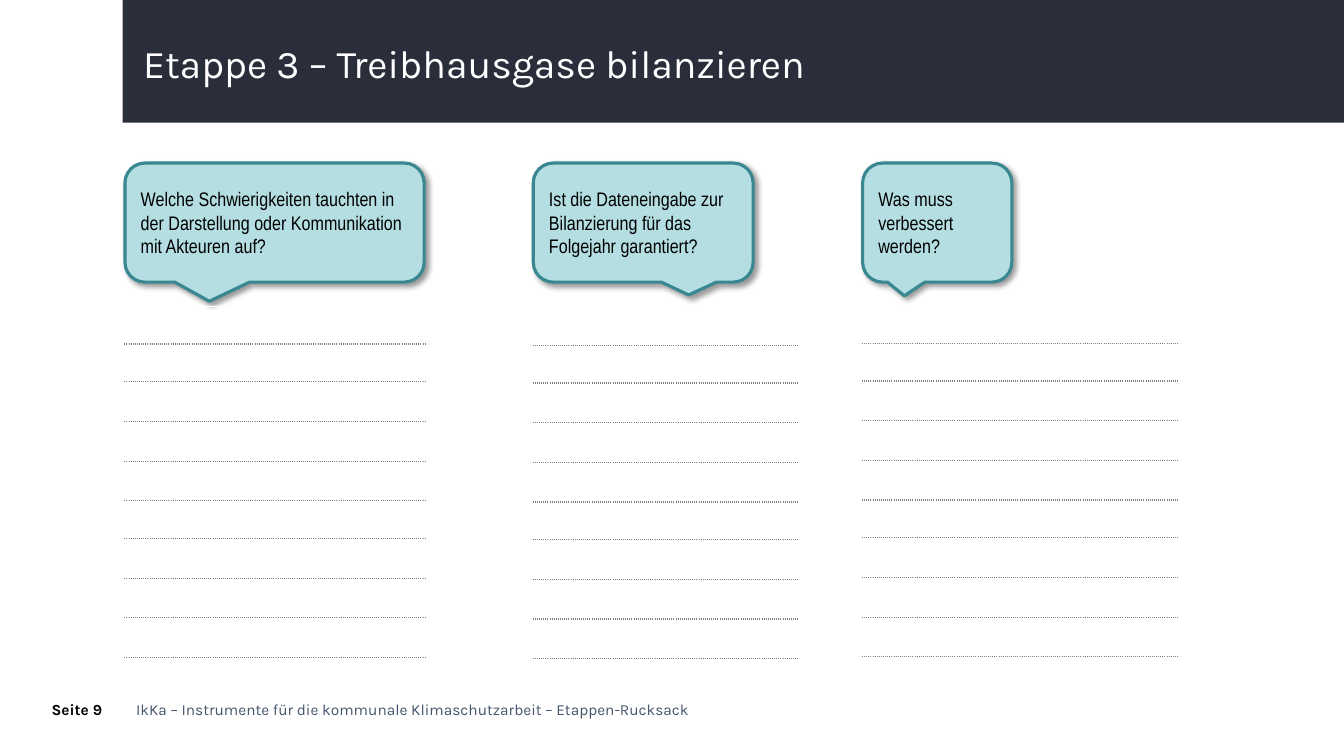
"""Builds the worksheet slide on balancing greenhouse gases."""
from dataclasses import dataclass

from pptx import Presentation, util as u
from pptx.dml.color import RGBColor
from pptx.enum import shapes, text
from pptx.oxml import parse_xml
from pptx.oxml.ns import nsdecls, qn


@dataclass(frozen=True)
class Theme:
    band: str = "2A2E3B"
    bubble: str = "B4DEE2"
    outline: str = "398891"
    rule: str = "808080"
    footer: str = "44546A"
    black: str = "000000"
    white: str = "FFFFFF"
    heading_font: str = "Karla"
    bubble_font: str = "Arial Narrow"
    title_size: int = 28
    bubble_size: int = 14
    footer_size: int = 11


theme = Theme()


def write(shape, words, font, size, color, anchor, inset=None, bold=False):
    frame = shape.text_frame
    frame.text = words
    frame.word_wrap = True
    frame.auto_size = text.MSO_AUTO_SIZE.NONE
    frame.vertical_anchor = anchor
    if inset is not None:
        frame.margin_left = frame.margin_right = inset
        frame.margin_top = frame.margin_bottom = inset
    paragraph = frame.paragraphs[0]
    paragraph.alignment = text.PP_ALIGN.LEFT
    paragraph.font.name = font
    paragraph.font.size = u.Pt(size)
    paragraph.font.bold = bold
    paragraph.font.color.rgb = RGBColor.from_string(color)
    return paragraph


def add_rule(cell, side):
    cell._tc.get_or_add_tcPr().append(parse_xml(
        f'<a:{side} {nsdecls("a")} w="12700"><a:solidFill><a:srgbClr val="{theme.rule}"/>'
        f'</a:solidFill><a:prstDash val="sysDot"/></a:{side}>'))


presentation = Presentation()
presentation.slide_width = u.Cm(33.87)
presentation.slide_height = u.Cm(19.05)
slide = presentation.slides.add_slide(presentation.slide_layouts[5])

title = slide.shapes.title
title.left, title.top, title.width, title.height = u.Cm(3.35), u.Cm(0.89), u.Cm(29.21), u.Cm(1.55)
heading = write(title, "Etappe 3 – Treibhausgase bilanzieren", theme.heading_font,
                theme.title_size, theme.white, text.MSO_ANCHOR.MIDDLE)
heading.line_spacing = 0.9

band = slide.shapes.add_shape(shapes.MSO_SHAPE.RECTANGLE, u.Cm(3.09), 0, u.Cm(30.78), u.Cm(3.09))
band.shadow.inherit = False
band.fill.solid()
band.fill.fore_color.rgb = RGBColor.from_string(theme.band)
band.line.fill.background()
title.element.addprevious(band.element)

footers = [
    ("Seite 9", 1.3, 1.85, theme.black, True),
    ("IkKa – Instrumente für die kommunale Klimaschutzarbeit – Etappen-Rucksack",
     3.43, 14.6, theme.footer, False),
]
for words, left, width, color, bold in footers:
    box = slide.shapes.add_textbox(u.Cm(left), u.Cm(17.65), u.Cm(width), u.Cm(0.5))
    write(box, words, theme.heading_font, theme.footer_size, color,
          text.MSO_ANCHOR.TOP, inset=0, bold=bold)

row_heights = [0.95, 0.95, 1, 1, 1, 0.95, 1, 1, 1]
columns = [
    ("Welche Schwierigkeiten tauchten in der Darstellung oder Kommunikation mit Akteuren auf?",
     3.15, 7.54, (-0.218, 0.661), 7.72, 7.54),
    ("Ist die Dateneingabe zur Bilanzierung für das Folgejahr garantiert?",
     13.44, 5.54, (0.207, 0.608), 7.75, 6.68),
    ("Was muss verbessert werden?",
     21.74, 3.76, (-0.22, 0.615), 7.7, 7.92),
]
for question, left, bubble_width, tip, table_top, table_width in columns:
    bubble = slide.shapes.add_shape(shapes.MSO_SHAPE.ROUNDED_RECTANGULAR_CALLOUT,
                                    u.Cm(left), u.Cm(4.11), u.Cm(bubble_width), u.Cm(3))
    bubble.adjustments[0], bubble.adjustments[1] = tip
    bubble.adjustments[2] = 0.167
    bubble.fill.solid()
    bubble.fill.fore_color.rgb = RGBColor.from_string(theme.bubble)
    bubble.line.color.rgb = RGBColor.from_string(theme.outline)
    bubble.line.width = u.Pt(2.25)
    bubble.shadow.inherit = False
    bubble.element.spPr.find(qn("a:effectLst")).append(parse_xml(
        f'<a:outerShdw {nsdecls("a")} blurRad="50800" dist="38100" dir="2700000" algn="tl" '
        f'rotWithShape="0"><a:srgbClr val="{theme.black}"><a:alpha val="40000"/></a:srgbClr>'
        '</a:outerShdw>'))
    write(bubble, question, theme.bubble_font, theme.bubble_size, theme.black,
          text.MSO_ANCHOR.MIDDLE)

    table = slide.shapes.add_table(len(row_heights), 1, u.Cm(left), u.Cm(table_top),
                                   u.Cm(table_width), u.Cm(sum(row_heights))).table
    table.first_row = table.horz_banding = False
    for index, height in enumerate(row_heights):
        table.rows[index].height = u.Cm(height)
        cell = table.cell(index, 0)
        cell.margin_top = cell.margin_bottom = 0
        if index > 0:
            add_rule(cell, "lnT")
        add_rule(cell, "lnB")
        cell.fill.background()

presentation.save("out.pptx")
